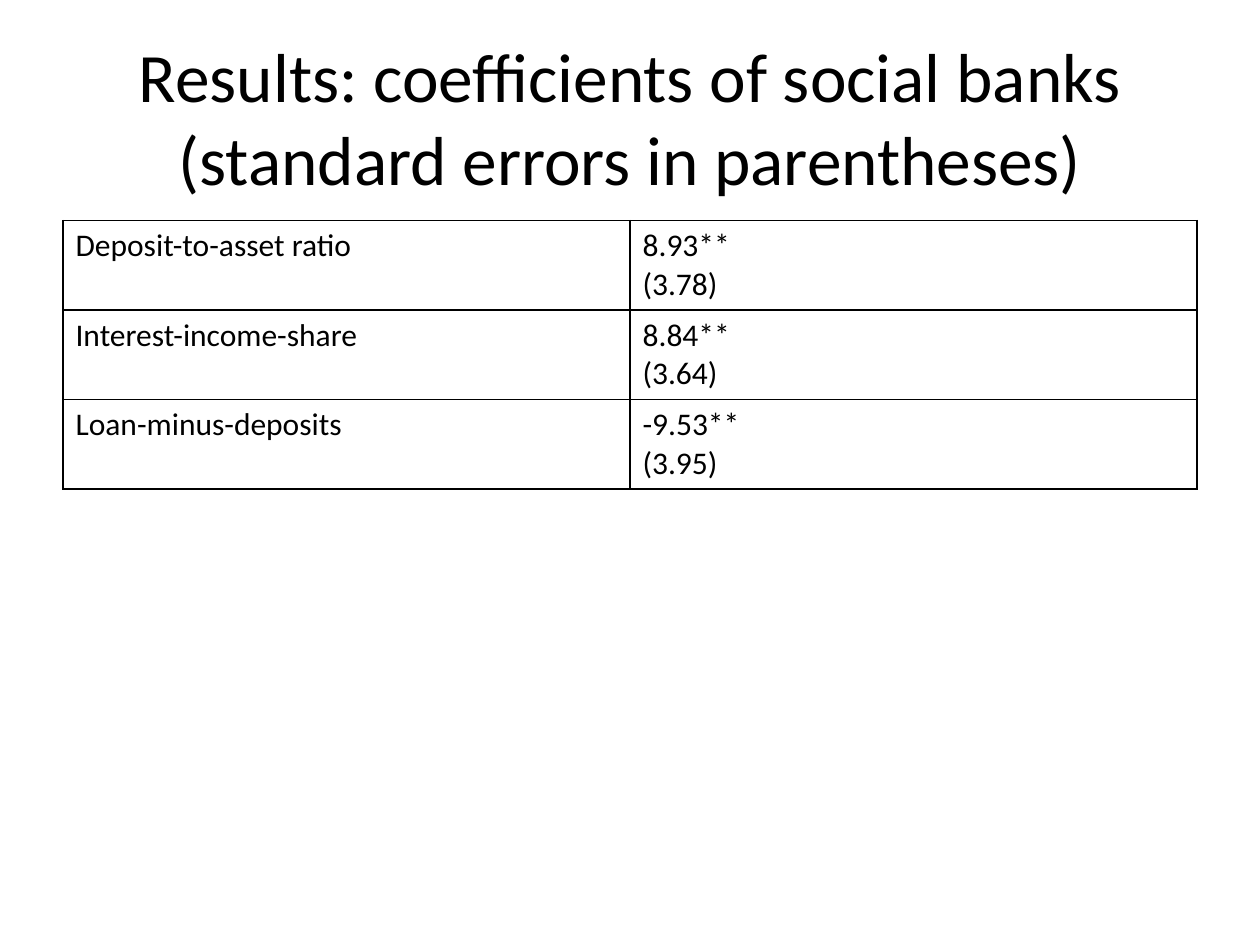
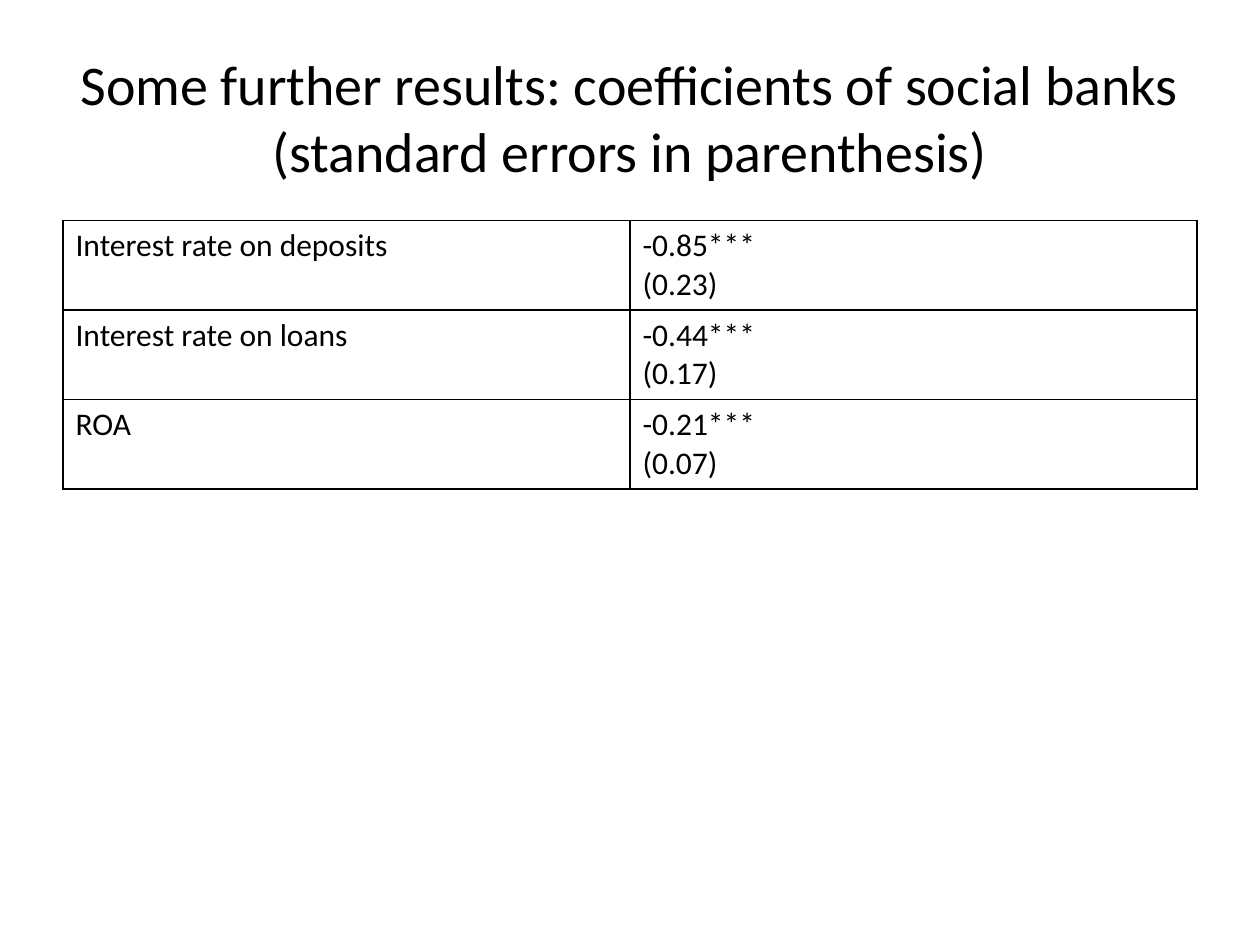
from lxml import etree
from pptx import Presentation
from pptx import util as u
from pptx.dml.color import RGBColor
from pptx.enum import text
from pptx.oxml import ns

INK = "000000"
FONT = "Calibri"
TITLE_BOX = (0.5, 0.3, 9, 1.25)
TABLE_BOX = (0.5, 1.75, 9, 2.13)
CELL_SIZE = 18
BORDER_WIDTH = 1

RESULTS = [
    ("Results: coefficients of social banks (standard errors in parentheses)", 39.6, [
        ("Deposit-to-asset ratio", "8.93**\n(3.78)"),
        ("Interest-income-share", "8.84**\n(3.64)"),
        ("Loan-minus-deposits", "-9.53**\n(3.95)"),
    ]),
    ("Some further results: coefficients of social banks (standard errors in parenthesis)", 32, [
        ("Interest rate on deposits", "-0.85***\n(0.23)"),
        ("Interest rate on loans", "-0.44***\n(0.17)"),
        ("ROA", "-0.21***\n(0.07)"),
    ]),
]


def color(value):
    return RGBColor.from_string(value)


def apply(target, values):
    for name, value in values.items():
        setattr(target, name, value)


def write(frame, words, size, align):
    frame.text = words
    for para in frame.paragraphs:
        para.alignment = align
        for span in para.runs:
            apply(span.font, {"name": FONT, "size": u.Pt(size), "bold": False})
            span.font.color.rgb = color(INK)


def add_borders(cell):
    properties = cell._tc.get_or_add_tcPr()
    for side in ("a:lnL", "a:lnR", "a:lnT", "a:lnB"):
        line = etree.SubElement(properties, ns.qn(side), w=str(u.Pt(BORDER_WIDTH)))
        fill = etree.SubElement(line, ns.qn("a:solidFill"))
        etree.SubElement(fill, ns.qn("a:srgbClr"), val=INK)


def place_title(page, words, size, box):
    title = page.shapes.title
    sides = map(u.Inches, box)
    apply(title, dict(zip(("left", "top", "width", "height"), sides)))
    apply(title.text_frame, {
        "word_wrap": True,
        "auto_size": text.MSO_AUTO_SIZE.NONE,
        "vertical_anchor": text.MSO_ANCHOR.MIDDLE,
    })
    write(title.text_frame, words, size, text.PP_ALIGN.CENTER)


def place_table(page, rows, box):
    table = page.shapes.add_table(len(rows), len(rows[0]), *map(u.Inches, box)).table
    apply(table, {"first_row": False, "horz_banding": False})
    for row, values in enumerate(rows):
        for column, words in enumerate(values):
            cell = table.cell(row, column)
            write(cell.text_frame, words, CELL_SIZE, text.PP_ALIGN.LEFT)
            add_borders(cell)
            cell.fill.background()


def add_results_page(deck, title, title_size, rows):
    page = deck.slides.add_slide(deck.slide_layouts.get_by_name("Title Only"))
    place_title(page, title, title_size, TITLE_BOX)
    place_table(page, rows, TABLE_BOX)


def main():
    deck = Presentation()
    apply(deck, {"slide_width": u.Inches(10), "slide_height": u.Inches(7.5)})
    for result in RESULTS:
        add_results_page(deck, *result)
    deck.save("out.pptx")


if __name__ == "__main__":
    main()
